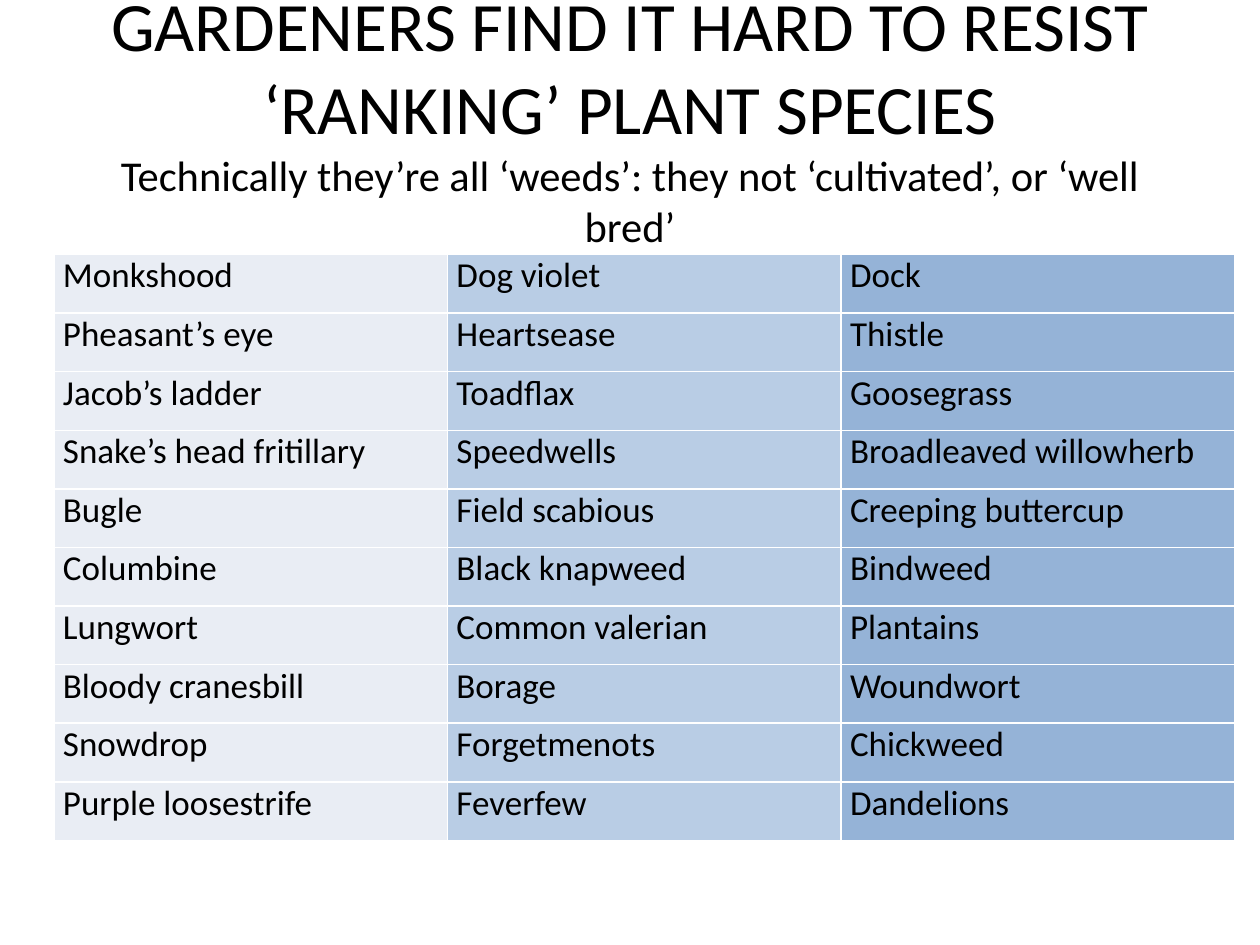
"""Build a slide that ranks wild plant species in a three-column table."""
from lxml.etree import SubElement
from pptx import Presentation
from pptx.dml.color import RGBColor
from pptx.enum.text import MSO_ANCHOR as Anchor, PP_ALIGN as Align
from pptx.oxml.ns import qn
from pptx.util import Inches, Pt

TITLE = "GARDENERS FIND IT HARD TO RESIST ‘RANKING’ PLANT SPECIES"
NOTE = "Technically they’re all ‘weeds’: they not ‘cultivated’, or ‘well bred’"
RANKS = [
    ("E9EDF4", ["Monkshood", "Pheasant’s eye", "Jacob’s ladder",
                "Snake’s head fritillary", "Bugle", "Columbine", "Lungwort",
                "Bloody cranesbill", "Snowdrop", "Purple loosestrife"]),
    ("B9CDE5", ["Dog violet", "Heartsease", "Toadflax", "Speedwells",
                "Field scabious", "Black knapweed", "Common valerian",
                "Borage", "Forgetmenots", "Feverfew"]),
    ("95B3D7", ["Dock", "Thistle", "Goosegrass", "Broadleaved willowherb",
                "Creeping buttercup", "Bindweed", "Plantains", "Woundwort",
                "Chickweed", "Dandelions"]),
]
LEFT, TOP, WIDTH, HEIGHT = 0.43, 2.02, 9.37, 4.65


def color(code):
    return RGBColor.from_string(code)


def write(para, text, size):
    run = para.add_run()
    run.text = text
    run.font.name = "Calibri"
    run.font.size = Pt(size)
    run.font.color.rgb = color("000000")


def add_title(slide):
    box = slide.shapes.add_textbox(Inches(0.5), Inches(0.3), Inches(9), Inches(1.25))
    frame = box.text_frame
    frame.word_wrap = True
    frame.vertical_anchor = Anchor.MIDDLE
    para = frame.paragraphs[0]
    para.alignment = Align.CENTER
    write(para, TITLE, 39.6)
    para.add_line_break()
    write(para, NOTE, 24.3)


def add_edges(cell):
    props = cell._tc.get_or_add_tcPr()
    for index, side in enumerate(("lnL", "lnR", "lnT", "lnB")):
        line = props.makeelement(qn(f"a:{side}"), {"w": str(Pt(1))})
        fill = SubElement(line, qn("a:solidFill"))
        SubElement(fill, qn("a:srgbClr"), val="FFFFFF")
        props.insert(index, line)


def fill_cell(cell, text, shade):
    cell.margin_left = cell.margin_right = Inches(0.07)
    cell.margin_top = cell.margin_bottom = 0
    cell.fill.solid()
    cell.fill.fore_color.rgb = color(shade)
    add_edges(cell)
    write(cell.text_frame.paragraphs[0], text, 20)


def add_ranks(slide):
    count = len(RANKS[0][1])
    table = slide.shapes.add_table(
        count, len(RANKS), Inches(LEFT), Inches(TOP), Inches(WIDTH), Inches(HEIGHT)
    ).table
    table.first_row = table.horz_banding = False
    for col, (shade, plants) in enumerate(RANKS):
        for row, plant in enumerate(plants):
            fill_cell(table.cell(row, col), plant, shade)


def main():
    deck = Presentation()
    deck.slide_width, deck.slide_height = Inches(10), Inches(7.5)
    slide = deck.slides.add_slide(deck.slide_layouts[6])
    add_title(slide)
    add_ranks(slide)
    deck.save("out.pptx")


if __name__ == "__main__":
    main()
